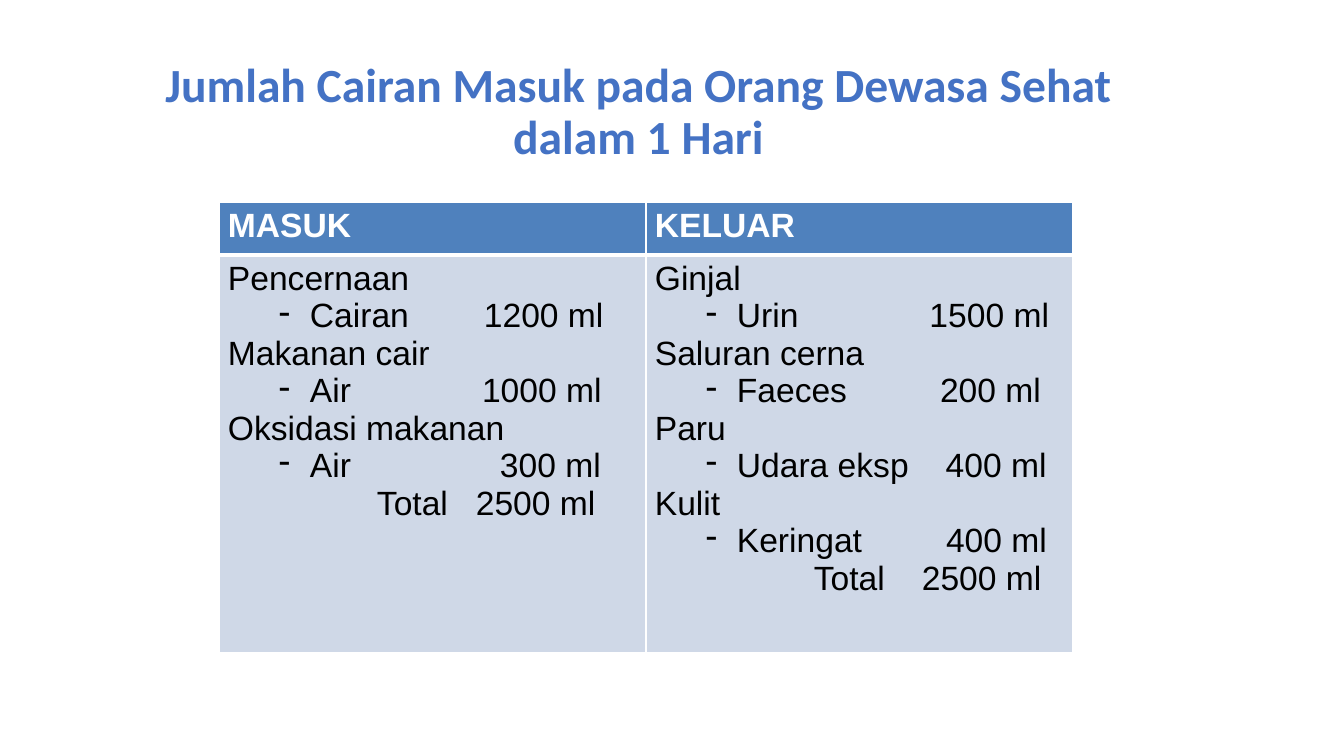
from dataclasses import dataclass
from pptx import Presentation
from pptx import util as u
from pptx.dml.color import RGBColor
from pptx.enum import text
from pptx.oxml import ns
from lxml import etree

SCALE = 914400 / 100.8


def px(n):
    return u.Emu(round(n * SCALE))


@dataclass
class Theme:
    title: str = "4472C4"
    head: str = "4F81BD"
    body: str = "CFD8E7"
    white: str = "FFFFFF"
    black: str = "000000"
    font: str = "Arial"
    big: int = 34
    size: int = 24


class Deck:
    def __init__(self, theme):
        self.theme = theme
        self.prs = Presentation()
        self.prs.slide_width, self.prs.slide_height = px(1344), px(756)
        self.slide = self.prs.slides.add_slide(self.prs.slide_layouts[5])

    def style(self, run, color, bold=False, font=None, size=None):
        run.font.name = font or self.theme.font
        run.font.size = u.Pt(size or self.theme.size)
        run.font.bold = bold
        run.font.color.rgb = RGBColor.from_string(color)

    def title(self, words, left, top, width, height):
        shape = self.slide.shapes.title
        shape.left, shape.top = px(left), px(top)
        shape.width, shape.height = px(width), px(height)
        frame = shape.text_frame
        frame.text = words
        frame.word_wrap = True
        frame.auto_size = text.MSO_AUTO_SIZE.NONE
        frame.vertical_anchor = text.MSO_ANCHOR.MIDDLE
        para = frame.paragraphs[0]
        para.alignment = text.PP_ALIGN.CENTER
        para.line_spacing = 0.9
        self.style(para.runs[0], self.theme.title, True, "Calibri", self.theme.big)

    def table(self, left, top, cols, rows):
        frame = self.slide.shapes.add_table(
            len(rows), len(cols), px(left), px(top), px(sum(cols)), px(sum(rows)))
        grid = frame.table
        for col, width in zip(grid.columns, cols):
            col.width = px(width)
        for row, height in zip(grid.rows, rows):
            row.height = px(height)
        return grid

    def cell(self, cell, fill, thick):
        """Fill a cell; the side named by thick gets the heavy rule."""
        cell.margin_left = cell.margin_right = px(9)
        cell.margin_top = cell.margin_bottom = px(5)
        props = cell._tc.get_or_add_tcPr()
        for side in "LRTB":
            line = etree.SubElement(props, ns.qn("a:ln" + side))
            line.set("w", str(u.Pt(3 if side == thick else 1)))
            solid = etree.SubElement(line, ns.qn("a:solidFill"))
            etree.SubElement(solid, ns.qn("a:srgbClr")).set("val", self.theme.white)
        cell.fill.solid()
        cell.fill.fore_color.rgb = RGBColor.from_string(fill)

    def head(self, cell, words):
        self.cell(cell, self.theme.head, "B")
        cell.text_frame.text = words
        self.style(cell.text_frame.paragraphs[0].runs[0], self.theme.white, True)

    def entry(self, para, label, amount, gap):
        """Label and amount, parted by one space tracked out to gap px."""
        for words in (label, " ", amount):
            run = para.add_run()
            run.text = words
            self.style(run, self.theme.black)
            if words == " ":
                track = gap * 72 / 100.8 - self.theme.size * 0.278
                run.font._element.set("spc", str(round(track * 100)))

    def indent(self, para, left, hang=0):
        props = para._p.get_or_add_pPr()
        props.set("marL", str(px(left)))
        props.set("indent", str(-px(hang)))
        return props

    def bullet(self, para):
        para.level = 1
        props = self.indent(para, 82, 31)
        etree.SubElement(props, ns.qn("a:buChar")).set("char", "-")

    def body(self, cell, groups, total, inset):
        self.cell(cell, self.theme.body, "T")
        frame = cell.text_frame
        para = frame.paragraphs[0]
        for group, *item in groups:
            para.text = group
            self.style(para.runs[0], self.theme.black)
            para = frame.add_paragraph()
            self.bullet(para)
            self.entry(para, *item)
            para = frame.add_paragraph()
        self.indent(para, inset)
        self.entry(para, *total)


# Each item: group, label, amount, gap in px
INTAKE = [
    ("Pencernaan", "Cairan", "1200 ml", 75),
    ("Makanan cair", "Air", "1000 ml", 131),
    ("Oksidasi makanan", "Air", "300 ml", 149),
]
OUTPUT = [
    ("Ginjal", "Urin", "1500 ml", 131),
    ("Saluran cerna", "Faeces", "200 ml", 93),
    ("Paru", "Udara eksp", "400 ml", 37),
    ("Kulit", "Keringat", "400 ml", 84),
]


def main():
    deck = Deck(Theme())
    # Title
    deck.title("Jumlah Cairan Masuk pada Orang Dewasa Sehat dalam 1 Hari",
               93, 40, 1091, 146)
    # Fluid balance table
    grid = deck.table(219, 202, [427, 427], [53, 398])
    sides = [
        ("MASUK", INTAKE, ("Total", "2500 ml", 28), 149),
        ("KELUAR", OUTPUT, ("Total", "2500 ml", 37), 159),
    ]
    for col, (name, groups, total, inset) in enumerate(sides):
        deck.head(grid.cell(0, col), name)
        deck.body(grid.cell(1, col), groups, total, inset)
    deck.prs.save("out.pptx")


if __name__ == "__main__":
    main()
